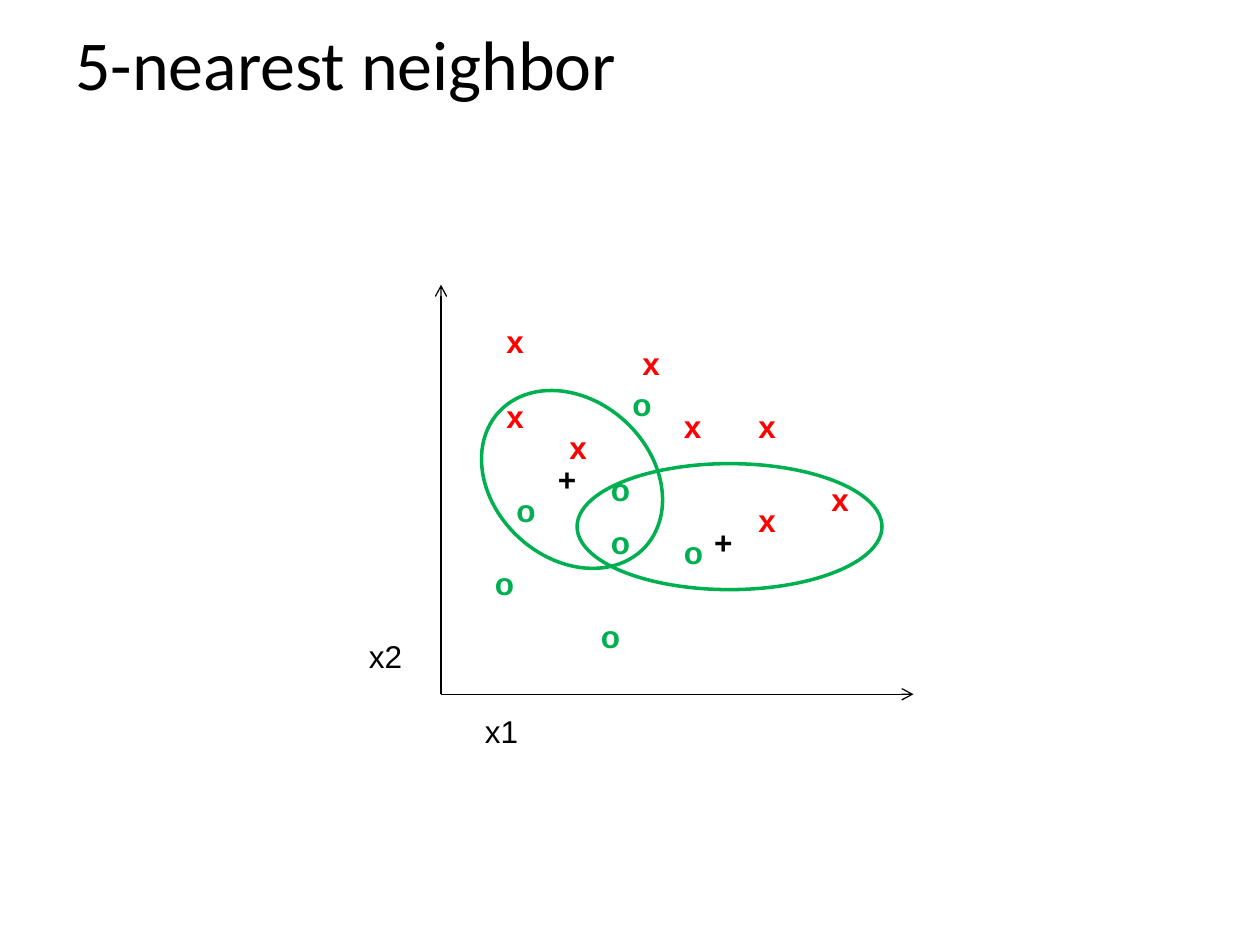
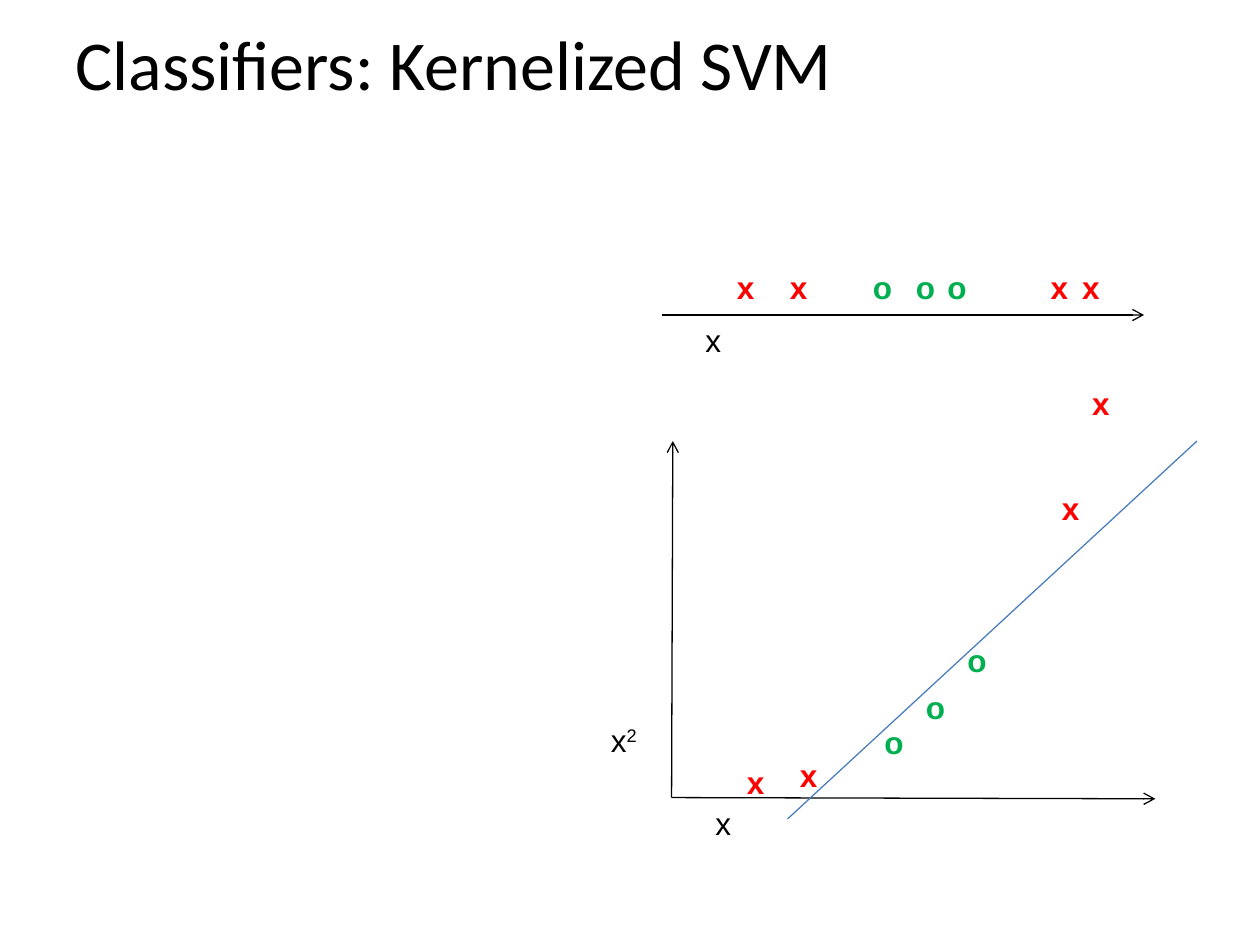
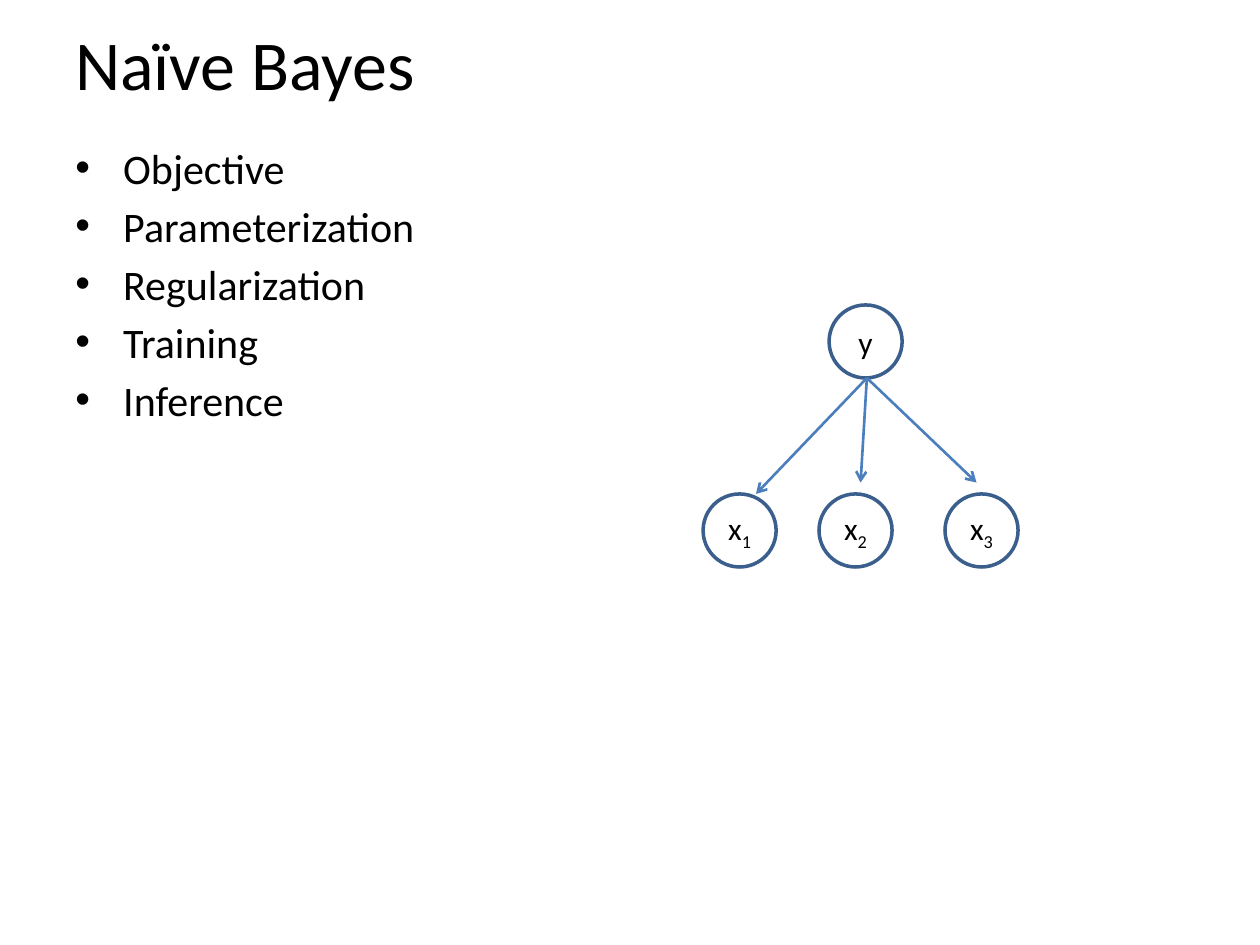
import lxml.etree
import pptx
import pptx.dml.color
import pptx.enum.shapes
import pptx.enum.text
import pptx.oxml.ns
import pptx.util

HUES = {"ink": "000000", "red": "FF0000", "green": "00B050", "edge": "3A5F8C", "blue": "4B7EBC"}
MARKS = {"x": ("red", 34), "o": ("green", 36), "+": ("ink", 35)}

NEAR = {
    "title": "5-nearest neighbor",
    "marks": {
        "x": [(533, 318), (592, 318), (592, 393), (650, 376), (392, 251), (392, 310), (500, 268), (442, 335)],
        "o": [(492, 301), (533, 418), (383, 443), (400, 385), (467, 485), (475, 410), (475, 368)],
        "+": [(433, 360), (557, 410)],
    },
    "axes": [(350, 551, 350, 226), (350, 551, 725, 551)],
    "names": [("x2", "", 283, 501, 47), ("x1", "", 375, 560, 47)],
    "rings": [(375, 318, 158, 125, 42.8), (458, 368, 242, 100, 0)],
}
KERNEL = {
    "title": "Classifiers: Kernelized SVM",
    "marks": {
        "x": [(x, 208) for x in (849, 617, 824, 575)] + [(857, 300), (625, 595), (833, 383), (583, 601)],
        "o": [(x, 208) for x in (742, 683, 717)] + [(758, 504), (692, 569), (725, 541)],
    },
    "axes": [(525, 250, 908, 250), (533, 633, 917, 634), (533, 633, 534, 350)],
    "names": [("x", "", 550, 250, 33), ("x", "", 558, 633, 33), ("x", "2", 475, 567, 42)],
    "split": (950, 350, 625, 650),
}
BAYES = {
    "title": "Naïve Bayes",
    "points": ["Objective", "Parameterization", "Regularization", "Training", "Inference"],
    "nodes": [("x", "1", 558, 392), ("x", "2", 650, 392), ("x", "3", 750, 392), ("y", "", 658, 242)],
    "root": (688, 300),
    "tips": [(600, 392), (683, 383), (775, 383)],
}
NODE = 58


def px(n):
    return pptx.util.Emu(n * 9144)


def hue(name):
    return pptx.dml.color.RGBColor.from_string(HUES[name])


def write(par, text, size, face, tint="ink", bold=False, base=0):
    run = par.add_run()
    run.text = text
    font = run.font
    font.size, font.name, font.bold = pptx.util.Pt(size), face, bold
    font.color.rgb = hue(tint)
    if base:
        run._r.get_or_add_rPr().set("baseline", str(base * 1000))


def box(slide, *area, wrap=False):
    shape = slide.shapes.add_textbox(*map(px, area))
    shape.text_frame.word_wrap = wrap
    return shape.text_frame


def label(slide, x, y, wide, text, tint="ink", bold=False, power=""):
    frame = box(slide, x, y, wide, 40)
    frame.auto_size = pptx.enum.text.MSO_AUTO_SIZE.SHAPE_TO_FIT_TEXT
    par = frame.paragraphs[0]
    write(par, text, 18, "Arial", tint, bold)
    if power:
        write(par, power, 18, "Arial", tint, bold, 30)


def line(slide, ends, tint="ink", width=0.75, arrow=True):
    link = slide.shapes.add_connector(pptx.enum.shapes.MSO_CONNECTOR.STRAIGHT, *map(px, ends))
    link.line.color.rgb = hue(tint)
    link.line.width = pptx.util.Pt(width)
    props = link._element.spPr
    name = pptx.oxml.ns.qn
    if arrow:
        lxml.etree.SubElement(props.find(name("a:ln")), name("a:tailEnd"), type="arrow")
    lxml.etree.SubElement(props, name("a:effectLst"))


def ring(slide, area, tint, turn=0):
    oval = slide.shapes.add_shape(pptx.enum.shapes.MSO_SHAPE.OVAL, *map(px, area))
    oval.shadow.inherit = False
    oval.fill.background()
    oval.line.color.rgb = hue(tint)
    oval.line.width = pptx.util.Pt(2)
    oval.rotation = turn
    return oval


def start(deck, title):
    slide = deck.slides.add_slide(deck.slide_layouts[6])
    frame = box(slide, 50, 0, 900, 100, wrap=True)
    frame.vertical_anchor = pptx.enum.text.MSO_ANCHOR.MIDDLE
    write(frame.paragraphs[0], title, 40, "Calibri")
    return slide


def plot(deck, data):
    slide = start(deck, data["title"])
    for sign, spots in data["marks"].items():
        tint, wide = MARKS[sign]
        for x, y in spots:
            label(slide, x, y, wide, sign, tint, True)
    for ends in data["axes"]:
        line(slide, ends)
    for text, power, x, y, wide in data["names"]:
        label(slide, x, y, wide, text, power=power)
    for *area, turn in data.get("rings", []):
        ring(slide, area, "green", turn)
    if "split" in data:
        line(slide, data["split"], "blue", arrow=False)


def bullets(slide, points):
    frame = box(slide, 50, 108, 900, 562, wrap=True)
    for i, text in enumerate(points):
        par = frame.add_paragraph() if i else frame.paragraphs[0]
        props = par._p.get_or_add_pPr()
        props.set("marL", str(px(38)))
        props.set("indent", str(px(-38)))
        name = pptx.oxml.ns.qn
        lxml.etree.SubElement(props, name("a:buFont"), typeface="Arial")
        lxml.etree.SubElement(props, name("a:buChar"), char="•")
        if i:
            par.space_before = pptx.util.Pt(4.3)
        write(par, text, 24, "Calibri")


def graph(deck, data):
    slide = start(deck, data["title"])
    bullets(slide, data["points"])
    for text, index, x, y in data["nodes"]:
        frame = ring(slide, (x, y, NODE, NODE), "edge").text_frame
        frame.margin_left = frame.margin_right = 0
        frame.word_wrap = True
        frame.vertical_anchor = pptx.enum.text.MSO_ANCHOR.MIDDLE
        par = frame.paragraphs[0]
        par.alignment = pptx.enum.text.PP_ALIGN.CENTER
        write(par, text, 18, "Calibri")
        if index:
            write(par, index, 18, "Calibri", base=-25)
    for tip in data["tips"]:
        line(slide, data["root"] + tip, "blue", 1.5)


def main():
    deck = pptx.Presentation()
    deck.slide_width, deck.slide_height = px(1000), px(750)
    plot(deck, NEAR)
    plot(deck, KERNEL)
    graph(deck, BAYES)
    deck.save("out.pptx")


if __name__ == "__main__":
    main()
